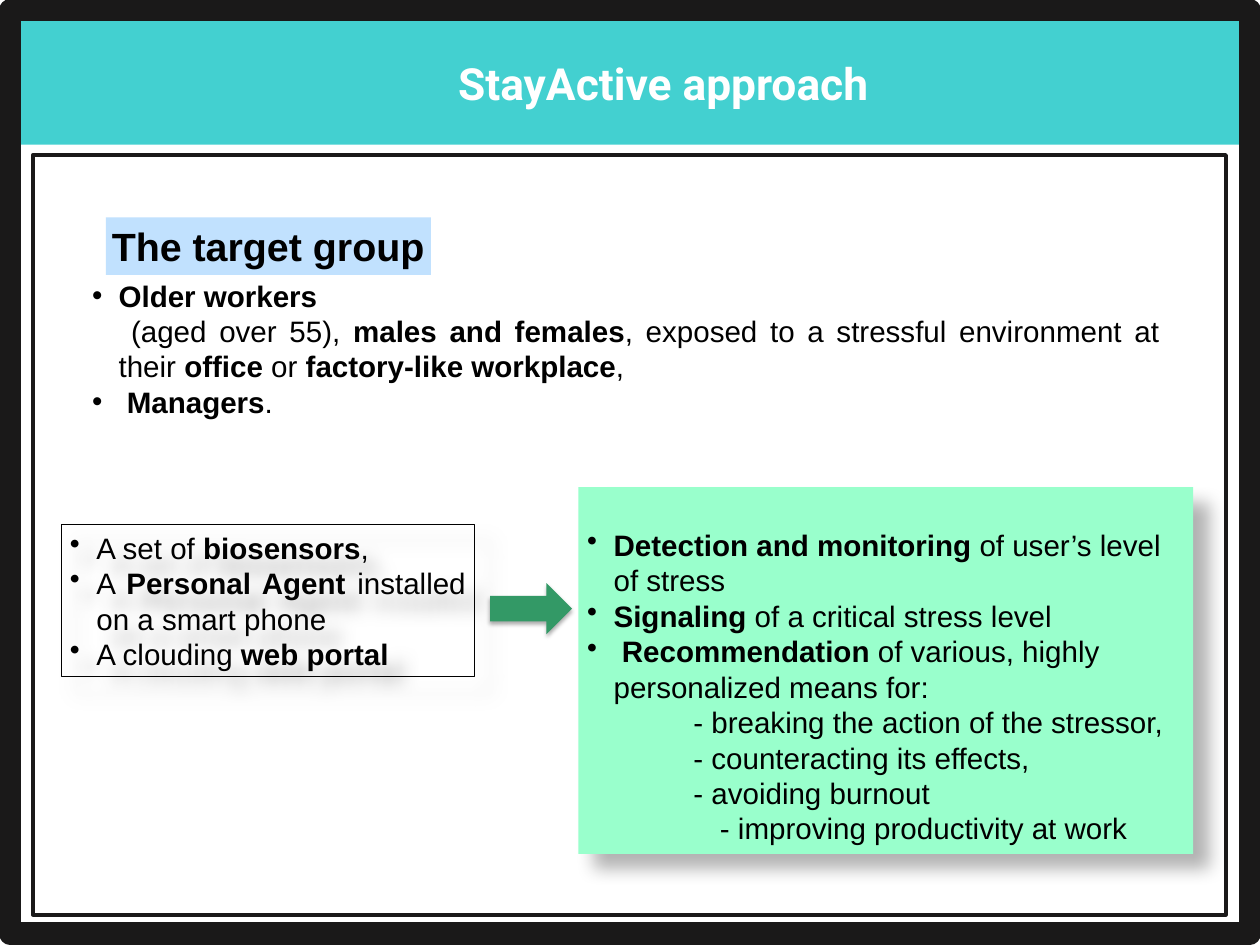
"""Build the StayActive approach slide: target group, tools and expected outcomes."""
from dataclasses import dataclass

from lxml.etree import SubElement
from pptx import Presentation
from pptx.dml.color import RGBColor
from pptx.enum.shapes import MSO_SHAPE
from pptx.enum.text import MSO_ANCHOR, MSO_AUTO_SIZE, PP_ALIGN
from pptx.oxml.ns import qn
from pptx.util import Inches, Pt


@dataclass(frozen=True)
class Theme:
    band: str = "43D0D0"
    frame: str = "1A1919"
    outcomes: str = "99FFCC"
    arrow: str = "339966"
    heading: str = "C1E1FE"
    text: str = "000000"
    title: str = "FFFFFF"
    title_font: str = "Roboto"
    body_font: str = "Arial"
    title_size: int = 36
    heading_size: int = 32
    body_size: int = 24


theme = Theme()


def add(kind, box, fill=None, line=None, width=0, shadow=None):
    """Add a preset shape; shadow is alpha %, blur pt, distance pt, angle."""
    sp = s.shapes.add_shape(kind, *box)
    sp.shadow.inherit = False
    if fill:
        sp.fill.solid()
        sp.fill.fore_color.rgb = RGBColor.from_string(fill)
    else:
        sp.fill.background()
    if line:
        sp.line.color.rgb = RGBColor.from_string(line)
        sp.line.width = Pt(width)
    else:
        sp.line.fill.background()
    if shadow:
        alpha, blur, dist, angle = shadow
        effects = sp.element.spPr.find(qn("a:effectLst"))
        outer = SubElement(effects, qn("a:outerShdw"), blurRad=str(Pt(blur)), dist=str(Pt(dist)),
                           dir=str(angle * 60000), algn="tl", rotWithShape="0")
        clr = SubElement(outer, qn("a:srgbClr"), val=theme.text)
        SubElement(clr, qn("a:alpha"), val=str(alpha * 1000))
    return sp


def write(tf, paras, align, anchor, size=theme.body_size, font=theme.body_font,
          color=theme.text, wrap=True):
    """Write (left, indent, bullet, text) paragraphs; asterisks enclose bold runs."""
    tf.auto_size = MSO_AUTO_SIZE.NONE
    tf.word_wrap = wrap
    tf.vertical_anchor = anchor
    for i, (left, indent, bullet, text) in enumerate(paras):
        p = tf.paragraphs[0] if i == 0 else tf.add_paragraph()
        pPr = p._p.get_or_add_pPr()
        pPr.set("marL", str(Inches(left)))
        pPr.set("indent", str(Inches(indent)))
        if bullet:
            SubElement(pPr, qn("a:buChar"), char="•")
        else:
            SubElement(pPr, qn("a:buNone"))
        p.alignment = align
        p.space_before = Pt(0)
        for j, part in enumerate(text.split("*")):
            if part:
                r = p.add_run()
                r.text = part
                r.font.size = Pt(size)
                r.font.name = font
                r.font.bold = j % 2 == 1
                r.font.color.rgb = RGBColor.from_string(color)


prs = Presentation()
prs.slide_width, prs.slide_height = Inches(14.22), Inches(10.67)
s = prs.slides.add_slide(prs.slide_layouts[1])
title, body = s.placeholders

shares = {
    "band": (0, 1.4, 100, 13.9),
    "outer": (0.8, 1.1, 98.4, 97.7),
    "inner": (2.6, 16.4, 94.7, 80.4),
    "title": (34.7, 5.4, 35.9, 6.7),
    "tools": (4.85, 55.5, 32.8, 16.1),
    "outcomes": (45.9, 51.55, 48.8, 38.8),
    "arrow": (38.9, 61.7, 6.5, 5.4),
    "heading": (8.4, 23, 25.8, 6.1),
    "group": (6.6, 28.9, 86.1, 16.1),
}
sides = (prs.slide_width, prs.slide_height) * 2
boxes = {name: [int(side * share / 100) for side, share in zip(sides, box)]
         for name, box in shares.items()}

add(MSO_SHAPE.RECTANGLE, boxes["band"], fill=theme.band)
for name, width in (("outer", 18), ("inner", 3)):
    add(MSO_SHAPE.RECTANGLE, boxes[name], line=theme.frame, width=width)

for sp, name in ((title, "title"), (body, "group")):
    sp.left, sp.top, sp.width, sp.height = boxes[name]
    sp.element.getparent().append(sp.element)

write(title.text_frame, [(0, 0, False, "*StayActive approach*")], PP_ALIGN.CENTER,
      MSO_ANCHOR.MIDDLE, theme.title_size, theme.title_font, theme.title, wrap=False)

write(body.text_frame, [
    (0.3, -0.3, True, "*Older workers*"),
    (0.3, 0.14, False, "(aged over 55), *males and females*, exposed to a stressful environment "
                       "at their *office* or *factory-like workplace*,"),
    (0.3, -0.3, True, " *Managers*."),
], PP_ALIGN.JUSTIFY, MSO_ANCHOR.TOP)

heading = add(MSO_SHAPE.RECTANGLE, boxes["heading"], fill=theme.heading)
write(heading.text_frame, [(0, 0, False, "*The target group*")], PP_ALIGN.CENTER,
      MSO_ANCHOR.MIDDLE, theme.heading_size, wrap=False)

soft = (30, 15, 18, 45)
tools = add(MSO_SHAPE.RECTANGLE, boxes["tools"], line=theme.text, width=0.75, shadow=soft)
write(tools.text_frame, [(0.3, -0.3, True, text) for text in (
    "A set of *biosensors*,",
    "A *Personal Agent* installed on a smart phone",
    "A clouding *web portal*",
)], PP_ALIGN.JUSTIFY, MSO_ANCHOR.MIDDLE)

outcomes = add(MSO_SHAPE.RECTANGLE, boxes["outcomes"], fill=theme.outcomes, shadow=soft)
outcomes.text_frame.margin_top = Inches(0.45)
write(outcomes.text_frame, [
    (0.3, -0.3, True, "*Detection and monitoring* of user’s level of stress"),
    (0.3, -0.3, True, "*Signaling* of a critical stress level"),
    (0.3, -0.3, True, " *Recommendation* of various, highly personalized means for:"),
    (1.2, 0, False, "- breaking the action of the stressor,"),
    (1.2, 0, False, "- counteracting its effects,"),
    (1.2, 0, False, "- avoiding burnout"),
    (1.5, 0, False, "- improving productivity at work"),
], PP_ALIGN.LEFT, MSO_ANCHOR.TOP)

add(MSO_SHAPE.RIGHT_ARROW, boxes["arrow"], fill=theme.arrow, shadow=(32, 3.5, 2.2, 90))

prs.save("out.pptx")
